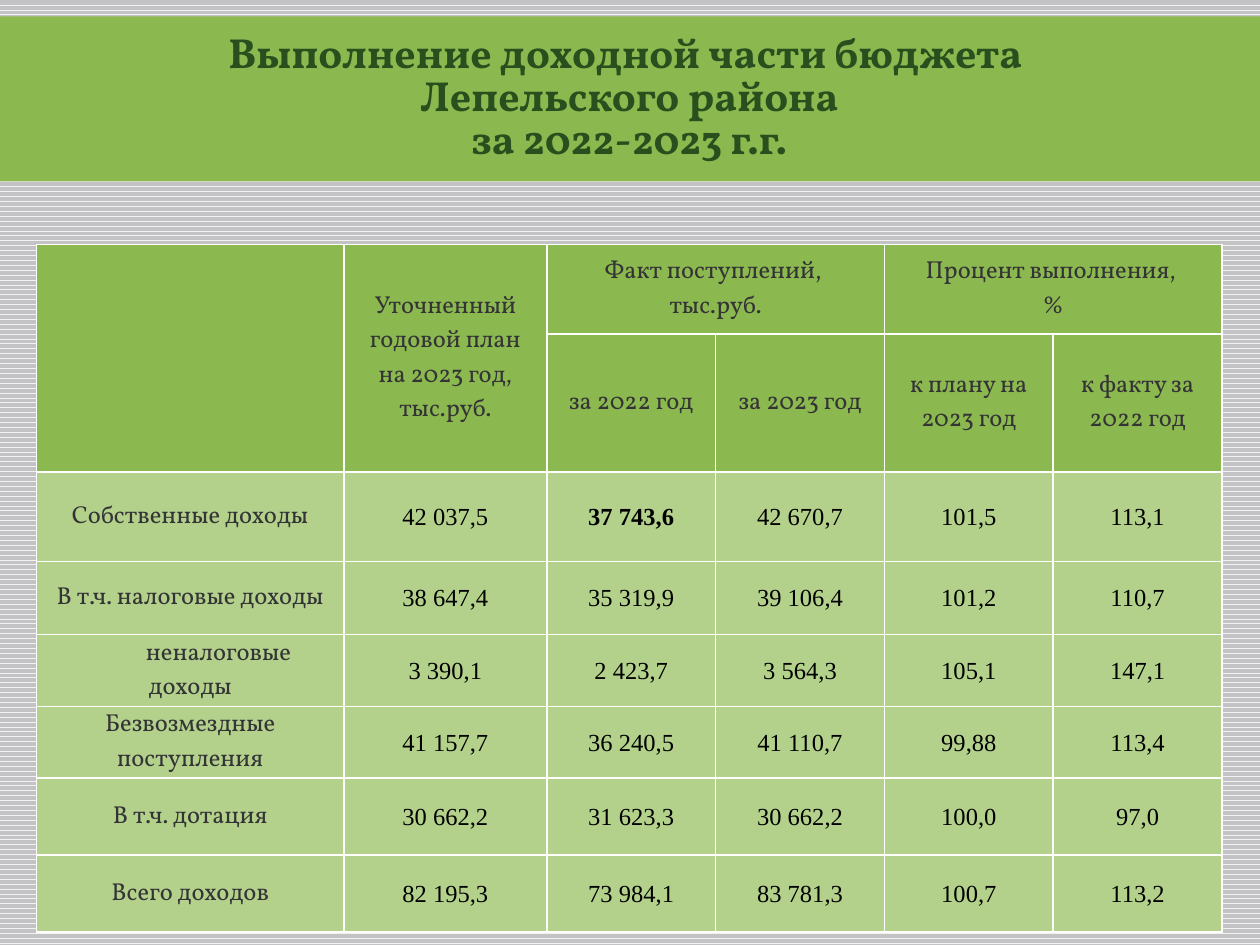
from pptx import Presentation
from pptx.dml.color import RGBColor
from pptx.enum.dml import MSO_PATTERN
from pptx.enum.text import MSO_ANCHOR, PP_ALIGN
from pptx.oxml import parse_xml
from pptx.oxml.ns import nsdecls
from pptx.util import Inches, Pt

WAVE = MSO_PATTERN.WAVE
MIDDLE = MSO_ANCHOR.MIDDLE
CENTER = PP_ALIGN.CENTER

GREEN = RGBColor(0x8C, 0xB9, 0x4F)
PALE = RGBColor(0xB3, 0xD1, 0x8B)
FOREST = RGBColor(0x28, 0x4F, 0x1D)
INK = RGBColor(0x34, 0x34, 0x36)
BLACK = RGBColor(0, 0, 0)
WHITE = RGBColor(0xFF, 0xFF, 0xFF)
MIST = RGBColor(0xF2, 0xF2, 0xF2)
GREY = RGBColor(0xC3, 0xC2, 0xC5)
SERIF = "Vollkorn"
ROMAN = "Times New Roman"

TITLE = "Выполнение доходной части бюджета \nЛепельского района\nза 2022-2023 г.г."
COLS = [2.44, 1.61] + [1.34] * 4
ROWS = [0.71, 1.04, 0.71, 0.58, 0.57, 0.57, 0.61, 0.61]
MERGES = [(0, 0, 1, 0), (0, 1, 1, 1), (0, 2, 0, 3), (0, 4, 0, 5)]
HEAD = [
    ["", "Уточненный годовой план на 2023 год, тыс.руб.",
     "Факт поступлений, \nтыс.руб.", "", "Процент выполнения, \n%", ""],
    ["", "", "за 2022 год", "за 2023 год", "к плану на 2023 год", "к факту за 2022 год"],
]
BODY = [
    ["Собственные доходы", "42 037,5", "37 743,6", "42 670,7", "101,5", "113,1"],
    ["В т.ч. налоговые доходы", "38 647,4", "35 319,9", "39 106,4", "101,2", "110,7"],
    ["неналоговые доходы", "3 390,1", "2 423,7", "3 564,3", "105,1", "147,1"],
    ["Безвозмездные поступления", "41 157,7", "36 240,5", "41 110,7", "99,88", "113,4"],
    ["В т.ч. дотация", "30 662,2", "31 623,3", "30 662,2", "100,0", "97,0"],
    ["Всего доходов", "82 195,3", "73 984,1", "83 781,3", "100,7", "113,2"],
]
BOLD = (2, 2)
INDENT = (4, 0)


def write(frame, text, size=14, font=SERIF, color=INK, bold=False, space=None, indent=0):
    for i, line in enumerate(text.split("\n")):
        para = frame.paragraphs[0] if i == 0 else frame.add_paragraph()
        para.alignment = CENTER
        if space:
            para.line_spacing = space
        if indent:
            para._p.get_or_add_pPr().set("indent", str(Inches(indent)))
        run = para.add_run()
        run.text = line
        run.font.size = Pt(size)
        run.font.name = font
        run.font.bold = bold
        run.font.color.rgb = color


class Deck:
    """Hold the style and the current slide."""

    def __init__(self, width, height):
        self.show = Presentation()
        self.show.slide_width = Inches(width)
        self.show.slide_height = Inches(height)
        self.slide = self.show.slides.add_slide(self.show.slide_layouts[5])

    def back(self):
        fill = self.slide.background.fill
        fill.patterned()
        fill.pattern = WAVE
        fill.fore_color.rgb = MIST
        fill.back_color.rgb = GREY

    def title(self, text, left, top, width, height):
        box = self.slide.shapes.title
        box.left, box.top = Inches(left), Inches(top)
        box.width, box.height = Inches(width), Inches(height)
        box.fill.solid()
        box.fill.fore_color.rgb = GREEN
        box.text_frame.vertical_anchor = MIDDLE
        write(box.text_frame, text, size=24, color=FOREST, bold=True, space=0.85)

    def cell(self, cell, fill, side):
        cell.fill.solid()
        cell.fill.fore_color.rgb = fill
        cell.vertical_anchor = MIDDLE
        cell.margin_left = cell.margin_right = Inches(side)
        cell.margin_top, cell.margin_bottom = Inches(0.01), 0
        props = cell._tc.get_or_add_tcPr()
        for i, edge in enumerate(("lnL", "lnR", "lnT", "lnB")):
            props.insert(i, parse_xml(
                f'<a:{edge} {nsdecls("a")} w="{Pt(1)}"><a:solidFill>'
                f'<a:srgbClr val="{WHITE}"/></a:solidFill></a:{edge}>'))

    def table(self, left, top):
        data = HEAD + BODY
        grid = self.slide.shapes.add_table(
            len(ROWS), len(COLS), Inches(left), Inches(top),
            Inches(sum(COLS)), Inches(sum(ROWS))).table
        for col, width in zip(grid.columns, COLS):
            col.width = Inches(width)
        for row, height in zip(grid.rows, ROWS):
            row.height = Inches(height)
        for r, line in enumerate(data):
            for c, text in enumerate(line):
                head = r < len(HEAD)
                value = not head and c > 0
                cell = grid.cell(r, c)
                self.cell(cell, GREEN if head else PALE, 0.01 if value else 0.1)
                if text:
                    write(cell.text_frame, text,
                          font=ROMAN if value else SERIF,
                          color=BLACK if value else INK,
                          bold=(r, c) == BOLD,
                          indent=0.45 if (r, c) == INDENT else 0)
        for r, c, down, right in MERGES:
            grid.cell(r, c).merge(grid.cell(down, right))


def main():
    deck = Deck(10, 7.5)
    deck.back()
    deck.title(TITLE, -0.01, 0.13, 10.01, 1.31)
    deck.table(0.29, 1.94)
    deck.show.save("out.pptx")


if __name__ == "__main__":
    main()
